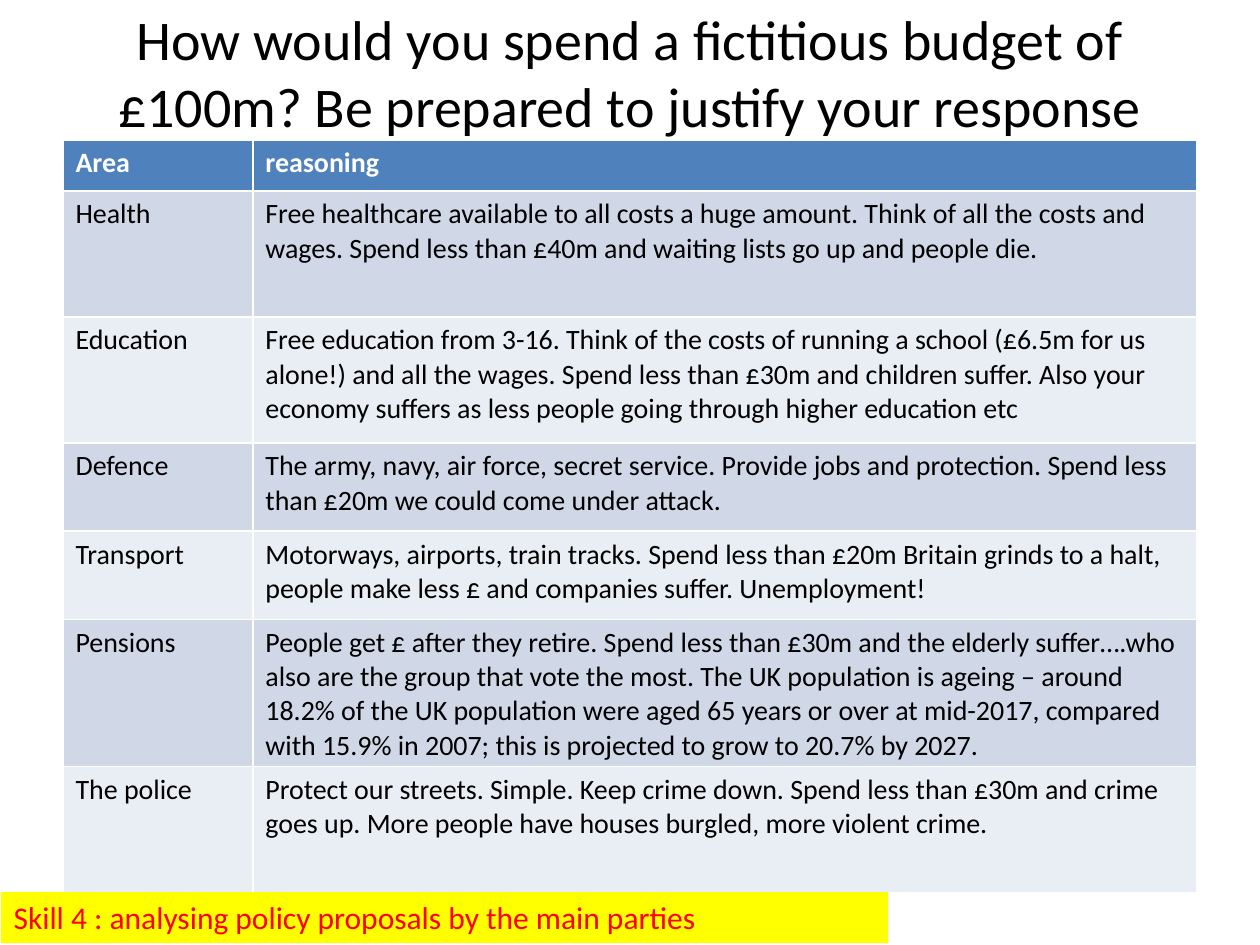
import pptx
import pptx.util
import pptx.dml.color
import pptx.enum.text

Pt = pptx.util.Pt
RGBColor = pptx.dml.color.RGBColor
ANCHOR = pptx.enum.text.MSO_ANCHOR
ALIGN = pptx.enum.text.PP_ALIGN

BLACK = RGBColor(0x00, 0x00, 0x00)
WHITE = RGBColor(0xFF, 0xFF, 0xFF)
RED = RGBColor(0xFF, 0x00, 0x00)
YELLOW = RGBColor(0xFF, 0xFF, 0x00)
HEADER_BLUE = RGBColor(0x4F, 0x81, 0xBD)
BANDS = (RGBColor(0xD0, 0xD8, 0xE8), RGBColor(0xE9, 0xED, 0xF4))

TITLE = "How would you spend a fictitious budget of £100m? Be prepared to justify your response"
SKILL = "Skill 4 : analysing policy proposals by the main parties"
COLUMN_WIDTHS = (108.5, 539.5)
ROWS = [
    (29.2, "Area", "reasoning"),
    (72, "Health", "Free healthcare available to all costs a huge amount. Think of all the costs and wages. "
     "Spend less than £40m and waiting lists go up and people die."),
    (72, "Education", "Free education from 3-16. Think of the costs of running a school (£6.5m for us alone!) "
     "and all the wages. Spend less than £30m and children suffer. Also your economy suffers as less "
     "people going through higher education etc"),
    (50.4, "Defence", "The army, navy, air force, secret service. Provide jobs and protection. "
     "Spend less than £20m we could come under attack."),
    (50.4, "Transport", "Motorways, airports, train tracks. Spend less than £20m Britain grinds to a halt, "
     "people make less £ and companies suffer. Unemployment!"),
    (84.2, "Pensions", "People get £ after they retire. Spend less than £30m and the elderly suffer….who also "
     "are the group that vote the most. The UK population is ageing – around 18.2% of the UK population "
     "were aged 65 years or over at mid-2017, compared with 15.9% in 2007; this is projected to grow to "
     "20.7% by 2027."),
    (72, "The police", "Protect our streets. Simple. Keep crime down. Spend less than £30m and crime goes up. "
     "More people have houses burgled, more violent crime."),
]


def write(frame, text, color, size, bold=False, align=ALIGN.LEFT):
    para = frame.paragraphs[0]
    para.alignment = align
    span = para.add_run()
    span.text = text
    span.font.color.rgb = color
    for name, value in {"name": "Calibri", "size": Pt(size), "bold": bold}.items():
        setattr(span.font, name, value)


def add_box(page, place, anchor):
    box = page.shapes.add_textbox(*map(Pt, place))
    box.text_frame.word_wrap = True
    box.text_frame.vertical_anchor = anchor
    return box


def add_budget_table(page):
    height = sum(row[0] for row in ROWS)
    table = page.shapes.add_table(len(ROWS), len(COLUMN_WIDTHS), Pt(36), Pt(79.9),
                                  Pt(sum(COLUMN_WIDTHS)), Pt(height)).table
    for column, width in zip(table.columns, COLUMN_WIDTHS):
        column.width = Pt(width)
    for index, (row_height, *texts) in enumerate(ROWS):
        header = index == 0
        table.rows[index].height = Pt(row_height)
        for cell, text in zip(table.rows[index].cells, texts):
            cell.fill.solid()
            cell.fill.fore_color.rgb = HEADER_BLUE if header else BANDS[(index - 1) % 2]
            write(cell.text_frame, text, WHITE if header else BLACK, 16, bold=header)


def main():
    deck = pptx.Presentation()
    deck.slide_width, deck.slide_height = Pt(720), Pt(540)
    page = deck.slides.add_slide(deck.slide_layouts[6])
    title = add_box(page, (36, 21.6, 648, 38.9), ANCHOR.MIDDLE)
    write(title.text_frame, TITLE, BLACK, 32, align=ALIGN.CENTER)
    add_budget_table(page)
    skill = add_box(page, (0.7, 509.8, 506.9, 29.1), ANCHOR.TOP)
    skill.fill.solid()
    skill.fill.fore_color.rgb = YELLOW
    write(skill.text_frame, SKILL, RED, 18)
    deck.save("out.pptx")


if __name__ == "__main__":
    main()
